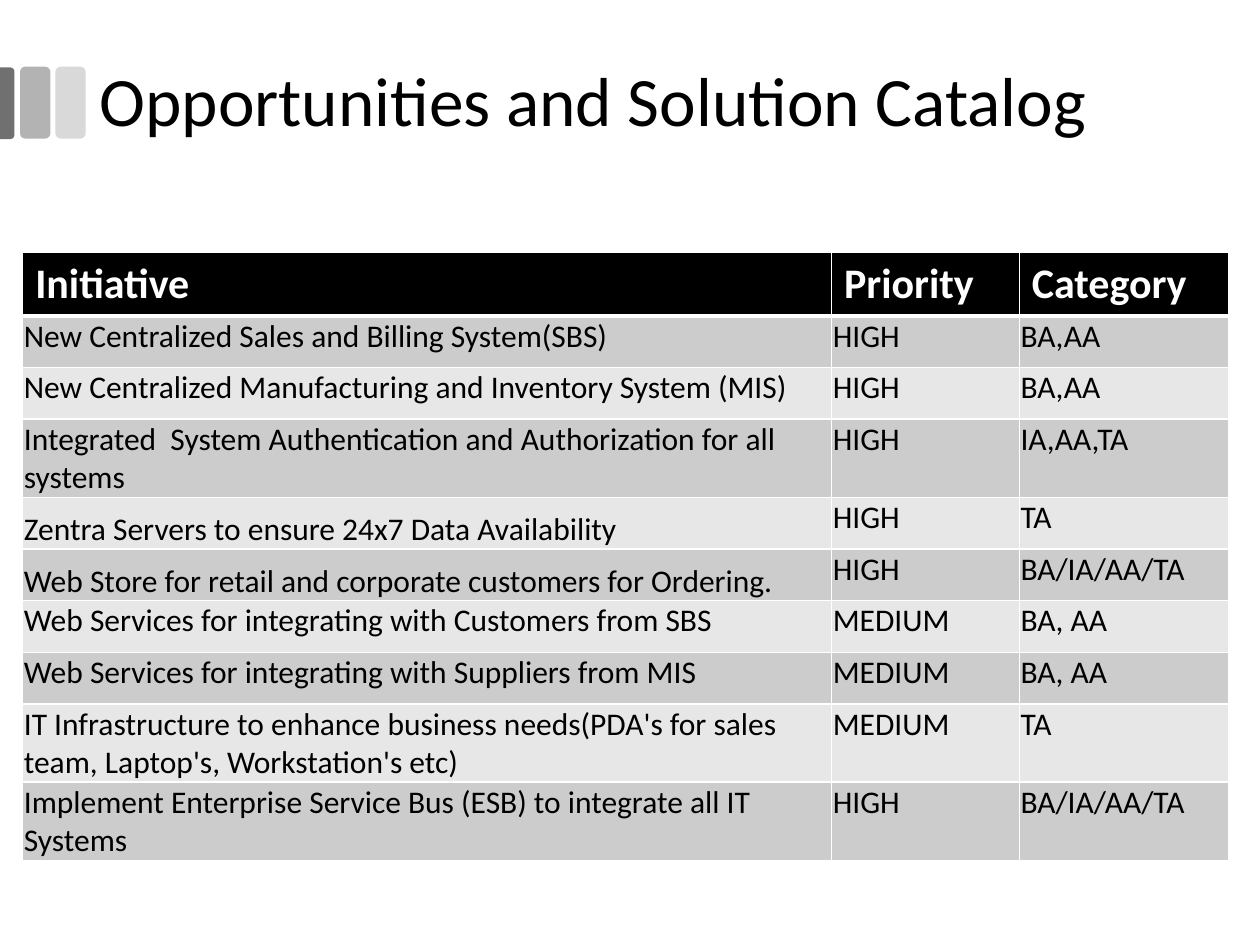
from lxml import etree
from pptx import Presentation
from pptx.dml.color import RGBColor
from pptx.enum.shapes import MSO_SHAPE
from pptx.enum.text import MSO_ANCHOR, MSO_AUTO_SIZE, PP_ALIGN
from pptx.oxml.ns import qn
from pptx.util import Inches, Pt

ROUNDED = MSO_SHAPE.ROUNDED_RECTANGLE
TOP_ROUNDED = MSO_SHAPE.ROUND_2_SAME_RECTANGLE
TOP, MIDDLE, BOTTOM = MSO_ANCHOR.TOP, MSO_ANCHOR.MIDDLE, MSO_ANCHOR.BOTTOM
LEFT = PP_ALIGN.LEFT
NO_AUTOFIT = MSO_AUTO_SIZE.NONE

COLORS = {
    "text": "000000", "header": "000000", "header_text": "FFFFFF", "border": "FFFFFF",
    "odd_row": "CCCCCC", "even_row": "E7E7E7",
    "light_tab": "D9D9D9", "mid_tab": "B3B3B3", "dark_tab": "707070",
}
FONT = "Calibri"


def style_text(paragraph, size, color, bold=False):
    for name, value in {"name": FONT, "size": Pt(size), "bold": bold}.items():
        setattr(paragraph.font, name, value)
    paragraph.font.color.rgb = RGBColor.from_string(COLORS[color])


def add_border(cell, side, width):
    line = etree.SubElement(cell._tc.get_or_add_tcPr(), qn(f"a:ln{side}"), w=str(Pt(width)))
    fill = etree.SubElement(line, qn("a:solidFill"))
    etree.SubElement(fill, qn("a:srgbClr"), val=COLORS["border"])


prs = Presentation()
prs.slide_width, prs.slide_height = Inches(10), Inches(7.5)
slide = prs.slides.add_slide(prs.slide_layouts[5])

title = slide.shapes.title
title_box = {"left": 0.69, "top": 0.17, "width": 8.62, "height": 1.31}
for name, value in title_box.items():
    setattr(title, name, Inches(value))
title.text_frame.text = "Opportunities and Solution Catalog"
title_format = {"vertical_anchor": MIDDLE, "word_wrap": True, "auto_size": NO_AUTOFIT}
for name, value in title_format.items():
    setattr(title.text_frame, name, value)
heading = title.text_frame.paragraphs[0]
heading.alignment = LEFT
heading.line_spacing = 0.9
style_text(heading, 39.6, "text")

tabs = [
    (ROUNDED, 0.44, 0.53, 0.24, 0.57, 0, "light_tab"),
    (ROUNDED, 0.16, 0.53, 0.24, 0.57, 0, "mid_tab"),
    (TOP_ROUNDED, -0.23, 0.76, 0.57, 0.12, 90, "dark_tab"),
]
for preset, left, top, width, height, rotation, color in tabs:
    tab = slide.shapes.add_shape(preset, Inches(left), Inches(top), Inches(width), Inches(height))
    tab.rotation = rotation
    tab.shadow.inherit = False
    tab.fill.solid()
    tab.fill.fore_color.rgb = RGBColor.from_string(COLORS[color])
    tab.line.fill.background()
    if preset == TOP_ROUNDED:
        tab.adjustments[0] = 0.29

initiatives = [
    ("Initiative", "Priority", "Category"),
    ("New Centralized Sales and Billing System(SBS)", "HIGH", "BA,AA"),
    ("New Centralized Manufacturing and Inventory System (MIS)", "HIGH", "BA,AA"),
    ("Integrated  System Authentication and Authorization for all systems", "HIGH", "IA,AA,TA"),
    ("Zentra Servers to ensure 24x7 Data Availability", "HIGH", "TA"),
    ("Web Store for retail and corporate customers for Ordering.", "HIGH", "BA/IA/AA/TA"),
    ("Web Services for integrating with Customers from SBS", "MEDIUM", "BA, AA"),
    ("Web Services for integrating with Suppliers from MIS", "MEDIUM", "BA, AA"),
    ("IT Infrastructure to enhance business needs(PDA's for sales team, Laptop's, "
     "Workstation's etc)", "MEDIUM", "TA"),
    ("Implement Enterprise Service Bus (ESB) to integrate all IT Systems", "HIGH", "BA/IA/AA/TA"),
]
bottom_anchored = {(4, 0), (5, 0)}
column_widths = [6.42, 1.49, 1.66]
row_height = 0.41
body_format = {
    "margin_left": Inches(0.01), "margin_right": Inches(0.01),
    "margin_top": Inches(0.01), "margin_bottom": Inches(0),
}

catalog = slide.shapes.add_table(
    len(initiatives), len(column_widths), Inches(0.18), Inches(2),
    Inches(sum(column_widths)), Inches(row_height * len(initiatives))).table
for column, width in zip(catalog.columns, column_widths):
    column.width = Inches(width)

for r, initiative in enumerate(initiatives):
    catalog.rows[r].height = Inches(row_height)
    is_header = r == 0
    row_color = "header" if is_header else "odd_row" if r % 2 else "even_row"
    borders = {"L": 1, "R": 1, "T": 3 if r == 1 else 1, "B": 3 if is_header else 1}
    for c, entry in enumerate(initiative):
        cell = catalog.cell(r, c)
        cell.text = entry
        cell.vertical_anchor = BOTTOM if (r, c) in bottom_anchored else TOP
        if is_header:
            style_text(cell.text_frame.paragraphs[0], 24, "header_text", bold=True)
        else:
            style_text(cell.text_frame.paragraphs[0], 18, "text")
            for name, value in body_format.items():
                setattr(cell, name, value)
        for side, width in borders.items():
            add_border(cell, side, width)
        cell.fill.solid()
        cell.fill.fore_color.rgb = RGBColor.from_string(COLORS[row_color])

prs.save("out.pptx")
